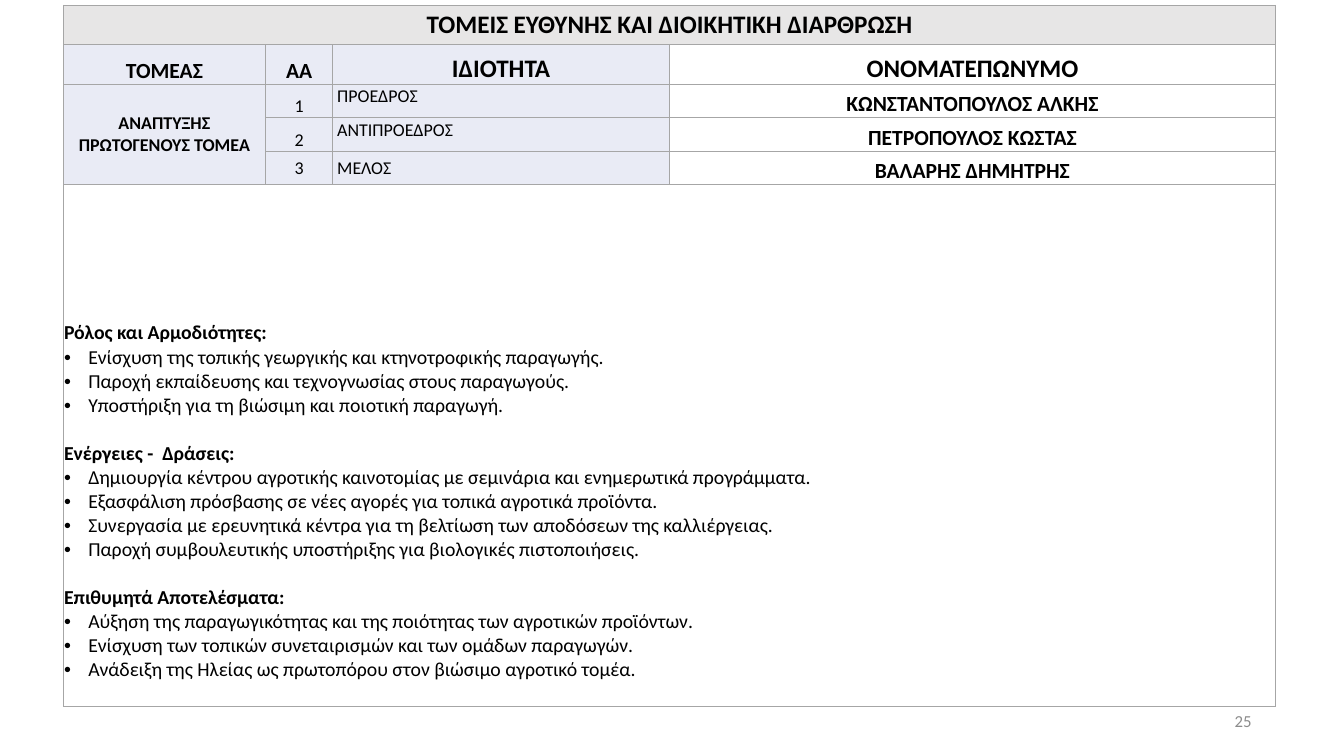
from pptx import Presentation
from pptx.dml.color import RGBColor
from pptx.enum.text import MSO_ANCHOR as Anchor, PP_ALIGN as Align
from pptx.oxml import parse_xml
from pptx.oxml.ns import nsdecls
from pptx.util import Pt

WIDTHS = [225, 75, 375, 675]
HEIGHTS = [43.9, 43.9, 37.4, 37.4, 37.4, 580.3]
HEADS = [("ΤΟΜΕΑΣ", 24), ("ΑΑ", 24), ("ΙΔΙΟΤΗΤΑ", 28), ("ΟΝΟΜΑΤΕΠΩΝΥΜΟ", 28)]
MEMBERS = [
    ("ΠΡΟΕΔΡΟΣ", "ΚΩΝΣΤΑΝΤΟΠΟΥΛΟΣ ΑΛΚΗΣ"),
    ("ΑΝΤΙΠΡΟΕΔΡΟΣ", "ΠΕΤΡΟΠΟΥΛΟΣ ΚΩΣΤΑΣ"),
    ("ΜΕΛΟΣ", "ΒΑΛΑΡΗΣ ΔΗΜΗΤΡΗΣ"),
]
PLAN = {
    "Ρόλος και Αρμοδιότητες:": [
        "Ενίσχυση της τοπικής γεωργικής και κτηνοτροφικής παραγωγής.",
        "Παροχή εκπαίδευσης και τεχνογνωσίας στους παραγωγούς.",
        "Υποστήριξη για τη βιώσιμη και ποιοτική παραγωγή.",
    ],
    "Ενέργειες -  Δράσεις:": [
        "Δημιουργία κέντρου αγροτικής καινοτομίας με σεμινάρια και ενημερωτικά προγράμματα.",
        "Εξασφάλιση πρόσβασης σε νέες αγορές για τοπικά αγροτικά προϊόντα.",
        "Συνεργασία με ερευνητικά κέντρα για τη βελτίωση των αποδόσεων της καλλιέργειας.",
        "Παροχή συμβουλευτικής υποστήριξης για βιολογικές πιστοποιήσεις.",
    ],
    "Επιθυμητά Αποτελέσματα:": [
        "Αύξηση της παραγωγικότητας και της ποιότητας των αγροτικών προϊόντων.",
        "Ενίσχυση των τοπικών συνεταιρισμών και των ομάδων παραγωγών.",
        "Ανάδειξη της Ηλείας ως πρωτοπόρου στον βιώσιμο αγροτικό τομέα.",
    ],
}


def paint(target, color):
    """Give a fill or a font a solid colour."""
    if hasattr(target, "solid"):
        target.solid()
        target = target.fore_color
    else:
        target = target.color
    target.rgb = RGBColor.from_string(color)


class Sheet:
    font, ink, edge = "Calibri", "000000", "A6A6A6"
    gray, blue, white = "E7E6E6", "E9EBF5", "FFFFFF"
    line = 26.85

    def __init__(self, slide):
        self.slide = slide

    def style(self, para, size, bold=False, align=Align.LEFT, color=ink):
        para.alignment = align
        for run in para.runs:
            run.font.name, run.font.size, run.font.bold = self.font, Pt(size), bold
            paint(run.font, color)

    def table(self, left, top, widths, heights):
        frame = self.slide.shapes.add_table(
            len(heights), len(widths), Pt(left), Pt(top), Pt(sum(widths)), Pt(sum(heights)))
        table = frame.table
        for col, width in zip(table.columns, widths):
            col.width = Pt(width)
        for row, height in zip(table.rows, heights):
            row.height = Pt(height)
        for cell in table.iter_cells():
            self.border(cell)
            paint(cell.fill, self.white)
        return table

    def border(self, cell):
        props = cell._tc.get_or_add_tcPr()
        for i, side in enumerate("LRTB"):
            props.insert(i, parse_xml(
                f'<a:ln{side} {nsdecls("a")} w="{Pt(1)}"><a:solidFill>'
                f'<a:srgbClr val="{self.edge}"/></a:solidFill></a:ln{side}>'))

    def cell(self, cell, text, size, bold=True, fill=blue, anchor=Anchor.BOTTOM,
             align=Align.CENTER, pad=0.7):
        paint(cell.fill, fill)
        cell.vertical_anchor = anchor
        cell.margin_left = cell.margin_right = Pt(pad)
        cell.margin_top = cell.margin_bottom = 0
        cell.text_frame.text = text
        for para in cell.text_frame.paragraphs:
            self.style(para, size, bold, align)

    def bullet(self, para, indent):
        props = para._p.get_or_add_pPr()
        props.set("marL", str(Pt(indent)))
        props.set("indent", str(Pt(-indent)))
        props.append(parse_xml(f'<a:buFont {nsdecls("a")} typeface="Arial"/>'))
        props.append(parse_xml(f'<a:buChar {nsdecls("a")} char="•"/>'))

    def plan(self, cell, groups):
        lines = [text for head, items in groups.items() for text in (head, *items)]
        self.cell(cell, "\n".join(lines), 22, False, self.white, align=Align.LEFT)
        cell.margin_bottom = Pt(self.line)
        for para in cell.text_frame.paragraphs:
            if para.text in groups:
                self.style(para, 22, True)
                para.space_before = Pt(self.line)
            else:
                self.bullet(para, 27)

    def number(self, text, left, top, width, height):
        frame = self.slide.shapes.add_textbox(
            Pt(left), Pt(top), Pt(width), Pt(height)).text_frame
        frame.word_wrap = True
        frame.vertical_anchor = Anchor.MIDDLE
        frame.margin_left = frame.margin_right = 0
        frame.margin_top = frame.margin_bottom = 0
        frame.text = text
        self.style(frame.paragraphs[0], 18.7, align=Align.RIGHT, color="8C8C8C")


def main():
    deck = Presentation()
    deck.slide_width, deck.slide_height = Pt(1496.9), Pt(841.7)
    sheet = Sheet(deck.slides.add_slide(deck.slide_layouts[6]))

    table = sheet.table(70.6, 5.8, WIDTHS, HEIGHTS)
    last = len(HEIGHTS) - 1
    for row in (0, last):
        table.cell(row, 0).merge(table.cell(row, 3))
    table.cell(2, 0).merge(table.cell(4, 0))

    sheet.cell(table.cell(0, 0), "ΤΟΜΕΙΣ ΕΥΘΥΝΗΣ ΚΑΙ ΔΙΟΙΚΗΤΙΚΉ ΔΙΑΡΘΡΩΣΗ", 28,
               fill=sheet.gray, anchor=Anchor.MIDDLE)
    for col, (head, size) in enumerate(HEADS):
        fill = sheet.white if col == 3 else sheet.blue
        sheet.cell(table.cell(1, col), head, size, fill=fill)
    sheet.cell(table.cell(2, 0), "ΑΝΑΠΤΥΞΗΣ ΠΡΩΤΟΓΕΝΟΥΣ ΤΟΜΕΑ", 20, anchor=Anchor.MIDDLE)

    for i, (role, name) in enumerate(MEMBERS, 1):
        final = i == len(MEMBERS)
        rank, post, person = (table.cell(i + 1, col) for col in (1, 2, 3))
        sheet.cell(rank, str(i), 20, False, anchor=Anchor.MIDDLE if final else Anchor.BOTTOM)
        sheet.cell(post, role, 20, False, anchor=Anchor.MIDDLE if final else Anchor.TOP,
                   align=Align.LEFT, pad=5)
        para = post.text_frame.paragraphs[0]
        para.line_spacing, para.space_after = 1.07, Pt(8)
        sheet.cell(person, name, 24, fill=sheet.white)

    sheet.plan(table.cell(last, 0), PLAN)
    sheet.number("25", 1057, 780.5, 337, 44.6)
    deck.save("out.pptx")


if __name__ == "__main__":
    main()
